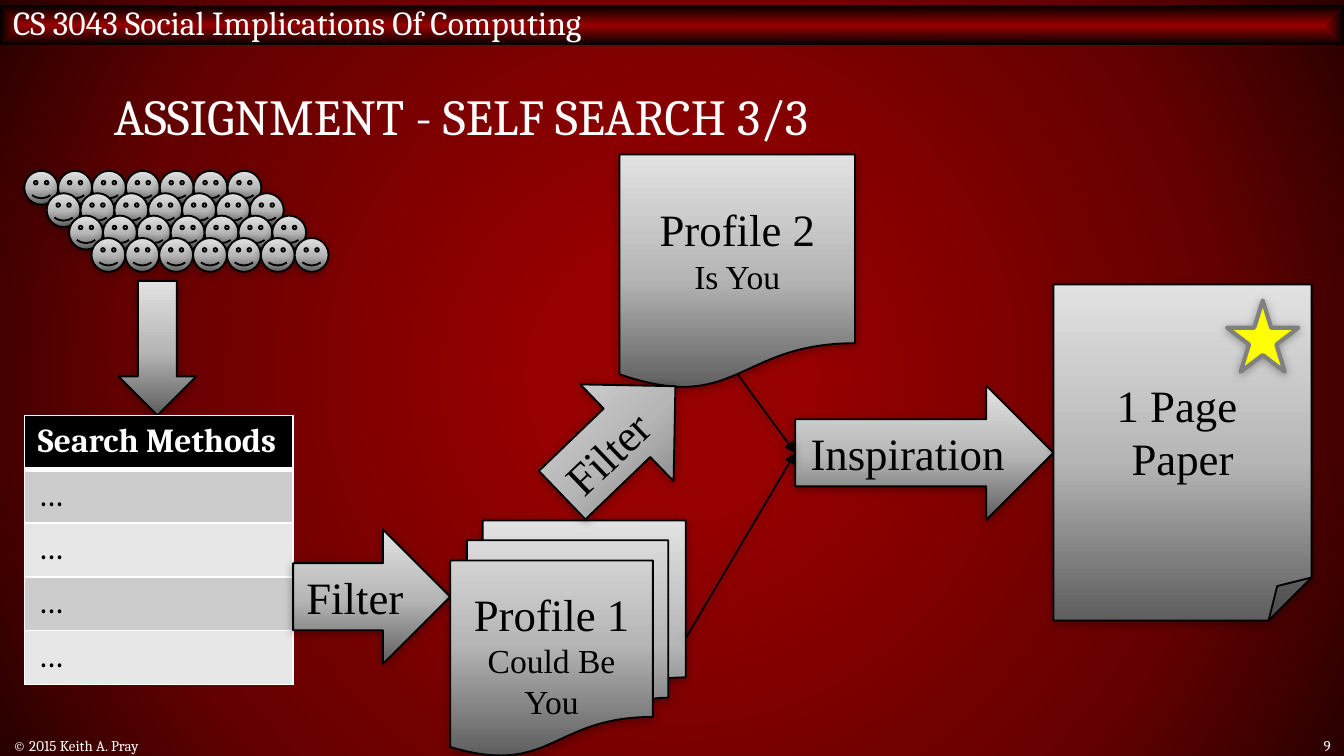
from lxml import etree
from pptx import Presentation
from pptx.dml.color import RGBColor
from pptx.enum.shapes import MSO_CONNECTOR, MSO_SHAPE
from pptx.enum.text import MSO_ANCHOR, PP_ALIGN
from pptx.oxml import parse_xml
from pptx.oxml.ns import nsdecls, qn
from pptx.util import Cm, Pt

LEFT, CENTER, RIGHT = PP_ALIGN.LEFT, PP_ALIGN.CENTER, PP_ALIGN.RIGHT
MIDDLE = MSO_ANCHOR.MIDDLE
RIGHT_ARROW, DOWN_ARROW = MSO_SHAPE.RIGHT_ARROW, MSO_SHAPE.DOWN_ARROW
DOCUMENT, DOCUMENTS = MSO_SHAPE.FLOWCHART_DOCUMENT, MSO_SHAPE.FLOWCHART_MULTIDOCUMENT
FOLDED, STAR, SMILEY = MSO_SHAPE.FOLDED_CORNER, MSO_SHAPE.STAR_5_POINT, MSO_SHAPE.SMILEY_FACE
RECTANGLE, STRAIGHT = MSO_SHAPE.RECTANGLE, MSO_CONNECTOR.STRAIGHT
TOP_SIDE, LEFT_SIDE, BOTTOM_SIDE, RIGHT_SIDE = range(4)

HEADING_FONT, DIAGRAM_FONT = "Cambria", "Times New Roman"
COLORS = {
    "ink": "000000", "white": "FFFFFF", "star": "FFFF00", "star edge": "808080",
    "red": "960000", "deep red": "650000", "dark red": "290000",
    "gray dark": "5E5E5E", "gray mid": "B6B6B6", "gray light": "E2E2E2",
    "band 1": "CCCCCC", "band 2": "E7E7E7",
}
GRAY = [(0, "gray dark"), (48, "gray mid"), (100, "gray light")]
UPWARD = '<a:lin ang="16200000" scaled="0"/>'
FROM_CENTER = ('<a:path path="{}"><a:fillToRect l="50000" t="50000" '
               'r="50000" b="50000"/></a:path>')


def rgb(name):
    return RGBColor.from_string(COLORS[name])


def set_gradient(fill, properties, stops, direction):
    """Replace the fill held in the given properties element by a gradient."""
    fill.solid()
    marks = "".join(f'<a:gs pos="{at * 1000}"><a:srgbClr val="{COLORS[name]}"/></a:gs>'
                    for at, name in stops)
    gradient = parse_xml(f'<a:gradFill {nsdecls("a")} rotWithShape="1">'
                         f'<a:gsLst>{marks}</a:gsLst>{direction}</a:gradFill>')
    properties.replace(properties.find(qn("a:solidFill")), gradient)


def add_shadow(properties):
    effects = properties.find(qn("a:effectLst"))
    if effects is None:
        effects = etree.SubElement(properties, qn("a:effectLst"))
    effects.append(parse_xml(
        f'<a:outerShdw {nsdecls("a")} blurRad="63500" dist="12700" dir="5400000" '
        'rotWithShape="0"><a:srgbClr val="000000"><a:alpha val="32000"/>'
        '</a:srgbClr></a:outerShdw>'))


def write(frame, lines, font, color="white", align=LEFT, wrap=True, bold=False):
    """Fill a text frame with (text, size) lines."""
    frame.word_wrap = wrap
    frame.vertical_anchor = MIDDLE
    for number, (text, size) in enumerate(lines):
        paragraph = frame.add_paragraph() if number else frame.paragraphs[0]
        paragraph.alignment = align
        run = paragraph.add_run()
        run.text = text
        for key, value in {"name": font, "size": Pt(size), "bold": bold}.items():
            setattr(run.font, key, value)
        run.font.color.rgb = rgb(color)


def add_gray(shapes, kind, box, lines=(), wrap=False):
    """Gray outlined diagram part with optional centred text."""
    part = shapes.add_shape(kind, *map(Cm, box))
    part.shadow.inherit = False
    set_gradient(part.fill, part.element.spPr, GRAY, UPWARD)
    part.line.color.rgb = rgb("ink")
    part.line.width = Pt(1)
    add_shadow(part.element.spPr)
    if lines:
        write(part.text_frame, lines, DIAGRAM_FONT, "ink", CENTER, wrap)
    return part


def add_header(slide, box):
    banner = slide.shapes.add_shape(RECTANGLE, *map(Cm, box))
    banner.shadow.inherit = False
    set_gradient(banner.fill, banner.element.spPr, [(0, "red"), (100, "ink")],
                 FROM_CENTER.format("shape"))
    banner.line.fill.background()
    banner.text_frame.margin_top = 0
    write(banner.text_frame, [("CS 3043 Social Implications Of Computing", 18)], HEADING_FONT)


def add_title(slide, box):
    title = slide.shapes.title
    title.left, title.top, title.width, title.height = map(Cm, box)
    write(title.text_frame, [("ASSIGNMENT - SELF SEARCH 3/3", 27)], HEADING_FONT)
    title.text_frame.paragraphs[0].line_spacing = 0.8


def add_footer(slide, box):
    left, top, width, height = box
    number_width = 1.73
    for text, x, w, align in [
            ("© 2015 Keith A. Pray", left, 15.44, LEFT),
            ("9", left + width - number_width, number_width, RIGHT)]:
        note = slide.shapes.add_textbox(Cm(x), Cm(top), Cm(w), Cm(height))
        write(note.text_frame, [(text, 8)], HEADING_FONT, align=align)


def add_crowd(slide, box, rows=4, columns=7, face=0.64):
    """Rows of faces, each row moved right of the one above."""
    left, top, width, height = box
    shift = (width - columns * face) / (rows - 1)
    drop = (height - face) / (rows - 1)
    crowd = slide.shapes.add_group_shape()
    for row in range(rows):
        for column in range(columns):
            add_gray(crowd.shapes, SMILEY,
                     (left + row * shift + column * face, top + row * drop, face, face))


def set_borders(cell, bottom):
    properties = cell._tc.get_or_add_tcPr()
    for index, (side, points) in enumerate(
            {"lnL": 1, "lnR": 1, "lnT": 1, "lnB": bottom}.items()):
        properties.insert(index, parse_xml(
            f'<a:{side} {nsdecls("a")} w="{Pt(points)}"><a:solidFill>'
            f'<a:srgbClr val="{COLORS["white"]}"/></a:solidFill></a:{side}>'))


def add_methods(slide, box):
    entries = ["Search Methods"] + ["…"] * 4
    table = slide.shapes.add_table(len(entries), 1, *map(Cm, box)).table
    for number, text in enumerate(entries):
        header = number == 0
        cell = table.cell(number, 0)
        cell.fill.solid()
        cell.fill.fore_color.rgb = rgb("ink" if header else f"band {2 - number % 2}")
        set_borders(cell, 3 if header else 1)
        write(cell.text_frame, [(text, 18)], HEADING_FONT,
              "white" if header else "ink", bold=header)


def add_paper(slide, box):
    left, top, width, _ = box
    paper = slide.shapes.add_group_shape()
    add_gray(paper.shapes, FOLDED, box, [("1 Page ", 24), ("Paper", 24)])
    size = 1.35
    star = paper.shapes.add_shape(
        STAR, Cm(left + width - size - 0.25), Cm(top + 0.3), Cm(size), Cm(size))
    star.shadow.inherit = False
    star.fill.solid()
    star.fill.fore_color.rgb = rgb("star")
    star.line.color.rgb = rgb("star edge")
    star.line.width = Pt(2.25)
    add_shadow(star.element.spPr)


def link(slide, source, side, target):
    """Arrow from one side of the source to the left of the target."""
    arrow = slide.shapes.add_connector(STRAIGHT, 0, 0, 0, 0)
    arrow.begin_connect(source, side)
    arrow.end_connect(target, LEFT_SIDE)
    arrow.line.color.rgb = rgb("ink")
    arrow.line.width = Pt(1)
    properties = arrow.element.spPr
    etree.SubElement(properties.find(qn("a:ln")), qn("a:tailEnd"), type="triangle")
    add_shadow(properties)
    return arrow


def add_flow(slide, box):
    """Filters, profiles and inspiration between the methods and the paper."""
    left, top, width, height = box
    shapes = slide.shapes
    page = 4.45
    filter_text = [("Filter", 24)]
    add_gray(shapes, RIGHT_ARROW, (left, top + 7.09, 2.97, 2.54), filter_text)
    profile_1 = add_gray(shapes, DOCUMENTS, (left + 2.97, top + height - page, page, page),
                         [("Profile 1", 24), ("Could Be You", 18)], wrap=True)
    profile_2 = add_gray(shapes, DOCUMENT, (left + 6.17, top, page, page),
                         [("Profile 2", 24), ("Is You", 18)])
    second_filter = add_gray(shapes, RIGHT_ARROW, (left + 4.67, top + 4.14, 2.97, 2.54),
                             filter_text)
    second_filter.rotation = 316.1
    inspiration = add_gray(shapes, RIGHT_ARROW, (left + width - 4.88, top + 4.37, 4.88, 2.54),
                           [("Inspiration", 24)])
    link(slide, profile_1, RIGHT_SIDE, inspiration)
    # The wavy edge of the document lies above the bottom of its box
    link(slide, profile_2, BOTTOM_SIDE, inspiration).begin_y = Cm(top + 4.15)


def main():
    deck = Presentation()
    deck.slide_width, deck.slide_height = Cm(25.4), Cm(14.29)
    slide = deck.slides.add_slide(deck.slide_layouts[5])

    # Background
    fill = slide.background.fill
    fill.solid()
    set_gradient(fill, slide.element.find(".//" + qn("p:bgPr")),
                 [(17, "red"), (71, "deep red"), (100, "dark red")],
                 FROM_CENTER.format("circle"))

    # Page frame
    add_header(slide, (0, 0.1, 25.4, 0.76))
    add_title(slide, (1.9, 1.02, 21.59, 2.54))
    add_footer(slide, (0, 13.88, 25.4, 0.41))

    # Diagram
    add_gray(slide.shapes, DOWN_ARROW, (2.24, 5.31, 1.47, 2.54))
    add_methods(slide, (0.46, 7.85, 5.08, 5.08))
    add_flow(slide, (5.54, 2.92, 14.37, 11.37))
    add_paper(slide, (19.91, 5.38, 4.88, 6.35))
    add_crowd(slide, (0.46, 3.23, 5.75, 1.91))

    deck.save("out.pptx")


if __name__ == "__main__":
    main()
